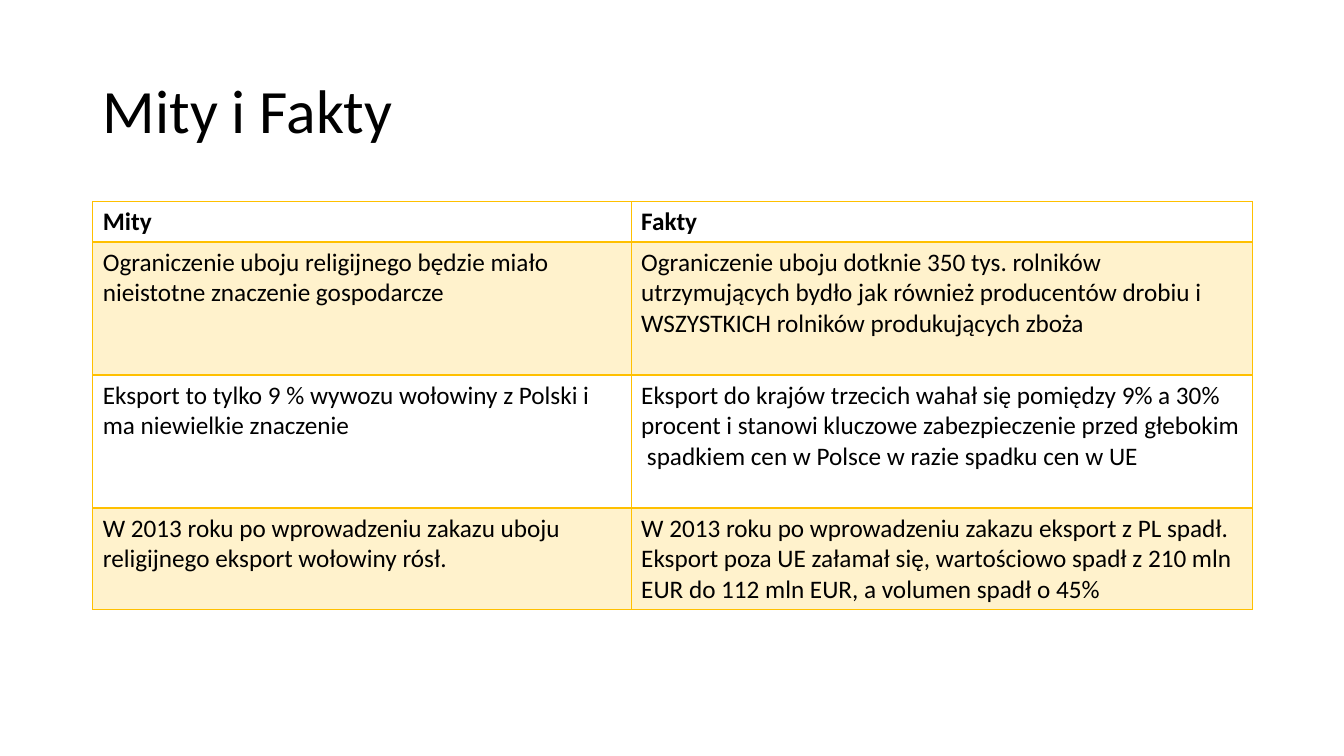
"""Build the slide that sets myths against facts in a two-column table."""
from lxml.etree import SubElement
from pptx import Presentation
from pptx.dml.color import RGBColor
from pptx.enum.text import MSO_ANCHOR
from pptx.oxml.ns import qn
from pptx.util import Inches, Pt

TITLE = "Mity i Fakty"
ROWS = [
    ("Mity", "Fakty"),
    ("Ograniczenie uboju religijnego będzie miało nieistotne znaczenie gospodarcze",
     "Ograniczenie uboju dotknie 350 tys. rolników utrzymujących bydło jak również "
     "producentów drobiu i WSZYSTKICH rolników produkujących zboża"),
    ("Eksport to tylko 9 % wywozu wołowiny z Polski i ma niewielkie znaczenie",
     "Eksport do krajów trzecich wahał się pomiędzy 9% a 30% procent i stanowi kluczowe "
     "zabezpieczenie przed głebokim  spadkiem cen w Polsce w razie spadku cen w UE"),
    ("W 2013 roku po wprowadzeniu zakazu uboju religijnego eksport wołowiny rósł.",
     "W 2013 roku po wprowadzeniu zakazu eksport z PL spadł.\n"
     "Eksport poza UE załamał się, wartościowo spadł z 210 mln EUR do 112 mln EUR, "
     "a volumen spadł o 45%"),
]
COLUMN_WIDTHS = (5.34, 6.16)
ROW_HEIGHTS = (0.4, 1.32, 1.32, 1.01)
LEFT, WIDTH = 0.92, 11.5
TITLE_TOP, TITLE_HEIGHT, TABLE_TOP = 0.4, 1.45, 2
FONT = "Calibri"
BLACK = RGBColor(0x00, 0x00, 0x00)
GOLD = RGBColor(0xFF, 0xC0, 0x00)
PALE_GOLD = RGBColor(0xFF, 0xF2, 0xCC)


def style_text(frame, size, bold=False):
    for para in frame.paragraphs:
        for span in para.runs:
            span.font.name = FONT
            span.font.size = Pt(size)
            span.font.bold = bold
            span.font.color.rgb = BLACK


def add_borders(cell, widths):
    properties = cell._tc.get_or_add_tcPr()
    for side, width in zip("LRTB", widths):
        line = SubElement(properties, qn(f"a:ln{side}"), w=str(Pt(width)))
        fill = SubElement(line, qn("a:solidFill"))
        SubElement(fill, qn("a:srgbClr"), val=str(GOLD))


def add_title(page):
    box = page.shapes.add_textbox(
        Inches(LEFT), Inches(TITLE_TOP), Inches(WIDTH), Inches(TITLE_HEIGHT))
    frame = box.text_frame
    frame.word_wrap = True
    frame.vertical_anchor = MSO_ANCHOR.MIDDLE
    frame.text = TITLE
    frame.paragraphs[0].line_spacing = 0.9
    style_text(frame, 44)


def add_comparison(page):
    table = page.shapes.add_table(
        len(ROWS), len(COLUMN_WIDTHS), Inches(LEFT), Inches(TABLE_TOP),
        Inches(WIDTH), Inches(sum(ROW_HEIGHTS))).table
    table.horz_banding = False
    for column, width in zip(table.columns, COLUMN_WIDTHS):
        column.width = Inches(width)
    for row, height in zip(table.rows, ROW_HEIGHTS):
        row.height = Inches(height)
    for row_index, texts in enumerate(ROWS):
        top = 2 if row_index == 1 else 1
        bottom = 2 if row_index == 0 else 1
        for column_index, text in enumerate(texts):
            cell = table.cell(row_index, column_index)
            cell.text_frame.text = text
            style_text(cell.text_frame, 18, bold=row_index == 0)
            add_borders(cell, (1, 1, top, bottom))
            if row_index % 2:
                cell.fill.solid()
                cell.fill.fore_color.rgb = PALE_GOLD
            else:
                cell.fill.background()


def main():
    deck = Presentation()
    deck.slide_width, deck.slide_height = Inches(13.33), Inches(7.5)
    page = deck.slides.add_slide(deck.slide_layouts[6])
    add_title(page)
    add_comparison(page)
    deck.save("out.pptx")


if __name__ == "__main__":
    main()
